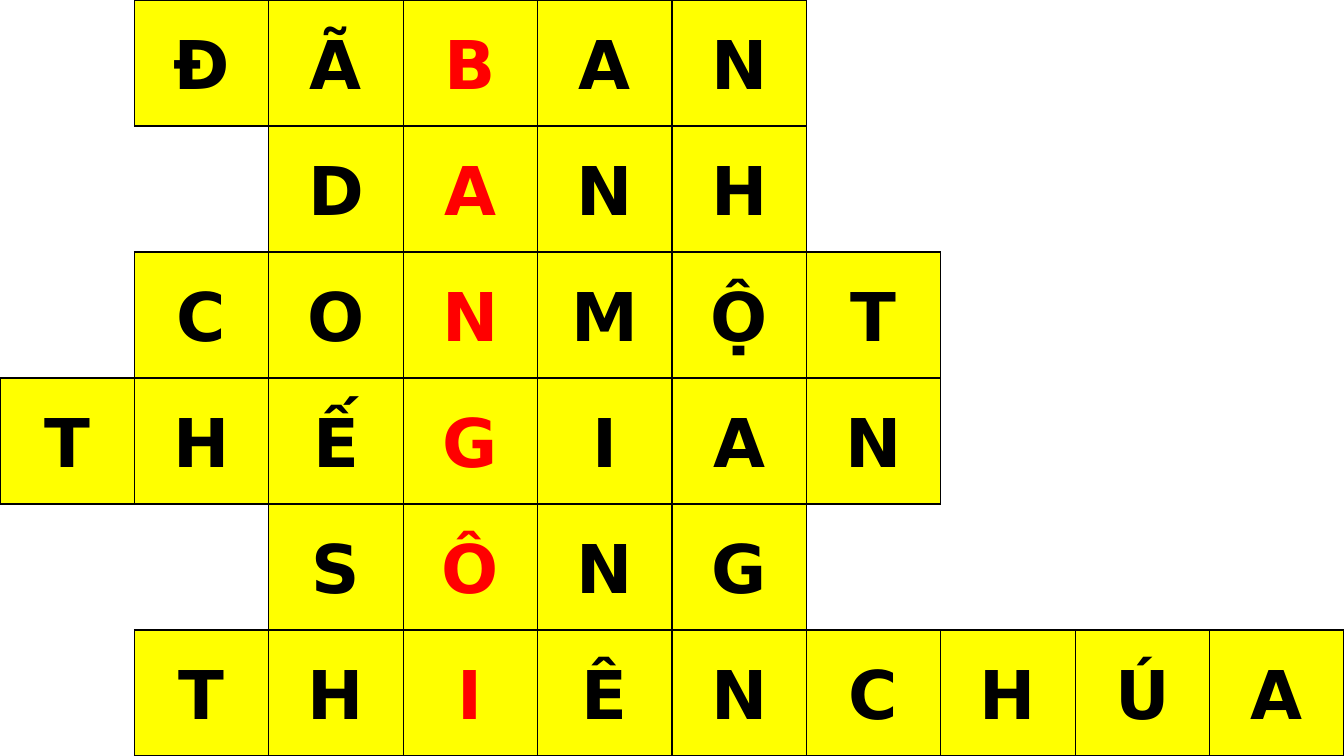
from lxml.etree import SubElement
from pptx import Presentation
from pptx.dml.color import RGBColor
from pptx.enum.text import MSO_ANCHOR as ANCHOR, PP_ALIGN as ALIGN
from pptx.oxml.ns import qn
from pptx.util import Cm, Pt

BLACK = RGBColor(0x00, 0x00, 0x00)
WHITE = RGBColor(0xFF, 0xFF, 0xFF)
YELLOW = RGBColor(0xFF, 0xFF, 0x00)
RED = RGBColor(0xFF, 0x00, 0x00)

FONT = "DejaVu Sans"
WIDTH, HEIGHT = Cm(33.87), Cm(19.05)
COLS = 10
KEY_COL = 3  # column that spells the answer

# First column and letters of each row
ANSWERS = [
    (1, "ĐÃBAN"),
    (2, "DANH"),
    (1, "CONMỘT"),
    (0, "THẾGIAN"),
    (2, "SÔNG"),
    (1, "THIÊNCHÚA"),
]

# Border tag and the offset of the neighbour on that side
SIDES = {"a:lnL": (0, -1), "a:lnR": (0, 1), "a:lnT": (-1, 0), "a:lnB": (1, 0)}


def place_letters():
    return {(row, start + i): letter
            for row, (start, word) in enumerate(ANSWERS)
            for i, letter in enumerate(word)}


def add_border(cell, tag, visible):
    ln = SubElement(cell._tc.get_or_add_tcPr(), qn(tag), w=str(Pt(1)))
    if visible:
        fill = SubElement(ln, qn("a:solidFill"))
        SubElement(fill, qn("a:srgbClr"), val=str(BLACK))
    else:
        SubElement(ln, qn("a:noFill"))


def fill_cell(cell, color):
    cell.fill.solid()
    cell.fill.fore_color.rgb = color


def write_letter(cell, letter, color):
    cell.vertical_anchor = ANCHOR.MIDDLE
    cell.margin_left = cell.margin_right = Cm(0.18)
    cell.margin_top = cell.margin_bottom = 0
    p = cell.text_frame.paragraphs[0]
    p.text = letter
    p.alignment = ALIGN.CENTER
    p.line_spacing = 1.07
    font = p.runs[0].font
    font.name, font.size, font.bold = FONT, Pt(48), True
    font.color.rgb = color


def add_crossword(slide):
    letters = place_letters()
    rows = len(ANSWERS)
    table = slide.shapes.add_table(rows, COLS, 0, 0, WIDTH, HEIGHT).table
    table.first_row = table.horz_banding = False
    for row in range(rows):
        for col in range(COLS):
            cell = table.cell(row, col)
            letter = letters.get((row, col))
            # A side is drawn when a letter stands on either side of it
            for tag, (down, right) in SIDES.items():
                neighbour = (row + down, col + right)
                add_border(cell, tag, bool(letter) or neighbour in letters)
            fill_cell(cell, YELLOW if letter else WHITE)
            if letter:
                write_letter(cell, letter, RED if col == KEY_COL else BLACK)


def main():
    prs = Presentation()
    prs.slide_width, prs.slide_height = WIDTH, HEIGHT
    s = prs.slides.add_slide(prs.slide_layouts[6])
    add_crossword(s)
    prs.save("out.pptx")


if __name__ == "__main__":
    main()
